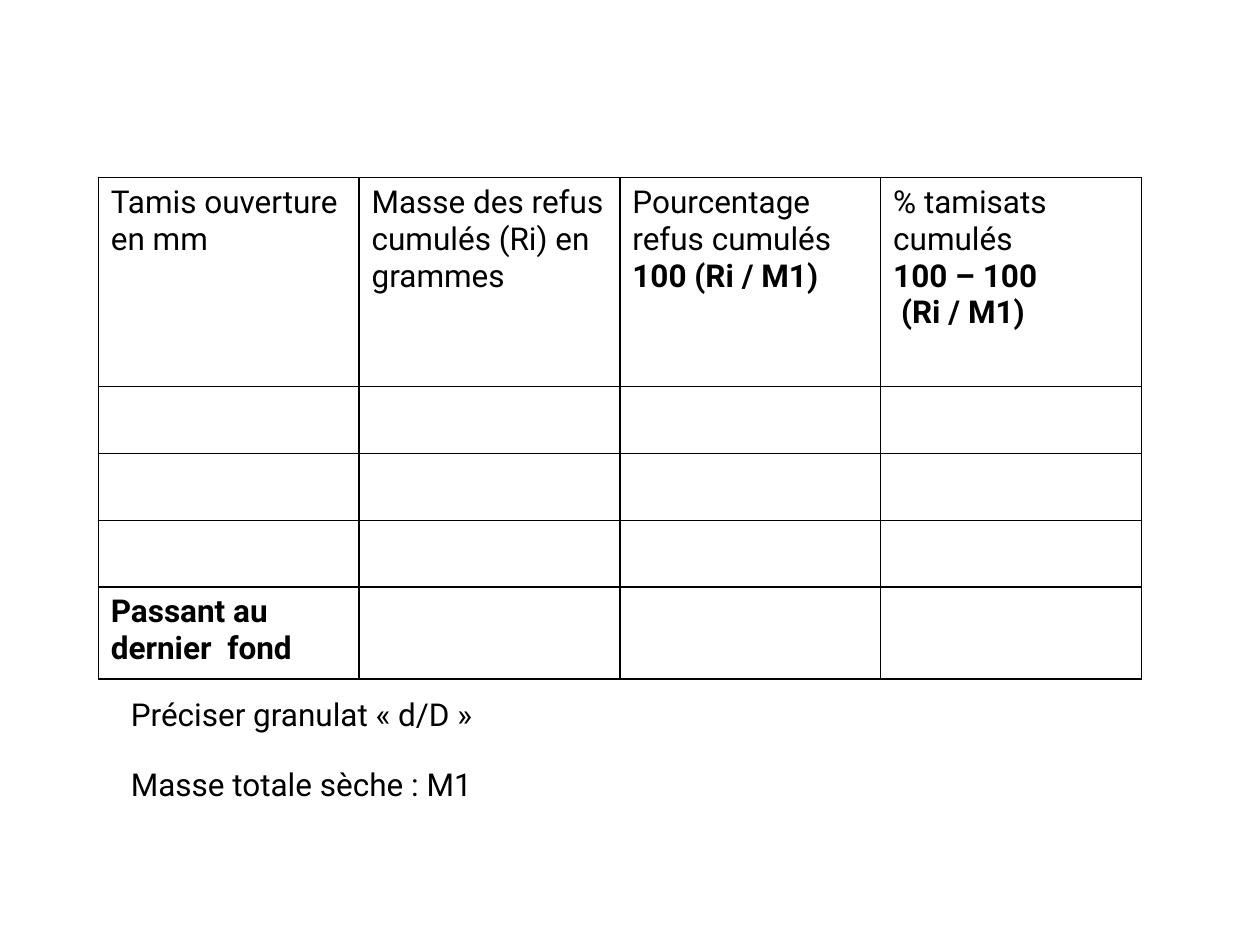
from typing import NamedTuple

import pptx
import pptx.dml.color
import pptx.enum.text
import pptx.oxml
import pptx.oxml.ns
import pptx.util

COLORS = {"text": "000000", "border": "000000"}
FONT = {"name": "Roboto", "size": pptx.util.Pt(18)}
SLIDE_W, SLIDE_H = pptx.util.Inches(10), pptx.util.Inches(7.5)


class Line(NamedTuple):
    text: str
    bold: bool = False


class Note(NamedTuple):
    text: str
    top: float


# Positions and sizes in percent of the slide's width (x) or height (y)
TABLE_LEFT, TABLE_TOP, TABLE_WIDTH = 7.8, 18.8, 82.8
ROW_HEIGHTS = [22.13, 7.07, 7.07, 7.07, 9.73]
NOTE_LEFT, NOTE_WIDTH, NOTE_HEIGHT = 9.4, 32.3, 5.33

HEADERS = [
    [Line("Tamis ouverture en mm")],
    [Line("Masse des refus cumulés (Ri) en grammes")],
    [Line("Pourcentage refus cumulés"), Line("100 (Ri / M1)", True)],
    [Line("% tamisats cumulés"), Line("100 – 100", True), Line(" (Ri / M1)", True)],
]
LAST_ROW_LABEL = [Line("Passant au dernier  fond", True)]
NOTES = [
    Note("Préciser granulat « d/D »", 72.93),
    Note("Masse totale sèche : M1", 80.27),
]


def x(percent: float) -> int:
    return round(SLIDE_W * percent / 100)


def y(percent: float) -> int:
    return round(SLIDE_H * percent / 100)


def write(tf, lines: list[Line]) -> None:
    for i, line in enumerate(lines):
        p = tf.add_paragraph() if i else tf.paragraphs[0]
        r = p.add_run()
        r.text = line.text
        for key, value in {**FONT, "bold": line.bold}.items():
            setattr(r.font, key, value)
        r.font.color.rgb = pptx.dml.color.RGBColor.from_string(COLORS["text"])


def set_borders(cell) -> None:
    tc_pr = cell._tc.get_or_add_tcPr()
    for i, side in enumerate("LRTB"):
        tc_pr.insert(i, pptx.oxml.parse_xml(
            f'<a:ln{side} {pptx.oxml.ns.nsdecls("a")} w="{pptx.util.Pt(1)}">'
            f'<a:solidFill><a:srgbClr val="{COLORS["border"]}"/></a:solidFill>'
            f'</a:ln{side}>'))


def add_sieve_table(s) -> None:
    rows, cols = len(ROW_HEIGHTS), len(HEADERS)
    table = s.shapes.add_table(rows, cols, x(TABLE_LEFT), y(TABLE_TOP),
                               x(TABLE_WIDTH), y(sum(ROW_HEIGHTS))).table
    table.first_row = table.horz_banding = False
    for column in table.columns:
        column.width = x(TABLE_WIDTH / cols)
    for row, height in zip(table.rows, ROW_HEIGHTS):
        row.height = y(height)
    for cell in table.iter_cells():
        cell.fill.background()
        set_borders(cell)
    for col, lines in enumerate(HEADERS):
        write(table.cell(0, col).text_frame, lines)
    write(table.cell(rows - 1, 0).text_frame, LAST_ROW_LABEL)


def add_note(s, note: Note) -> None:
    tf = s.shapes.add_textbox(x(NOTE_LEFT), y(note.top),
                              x(NOTE_WIDTH), y(NOTE_HEIGHT)).text_frame
    tf.word_wrap = True
    tf.auto_size = pptx.enum.text.MSO_AUTO_SIZE.SHAPE_TO_FIT_TEXT
    write(tf, [Line(note.text)])


def main() -> None:
    prs = pptx.Presentation()
    prs.slide_width, prs.slide_height = SLIDE_W, SLIDE_H
    s = prs.slides.add_slide(prs.slide_layouts[6])

    # Sieve results table
    add_sieve_table(s)

    # Notes under the table
    for note in NOTES:
        add_note(s, note)

    prs.save("out.pptx")


if __name__ == "__main__":
    main()
